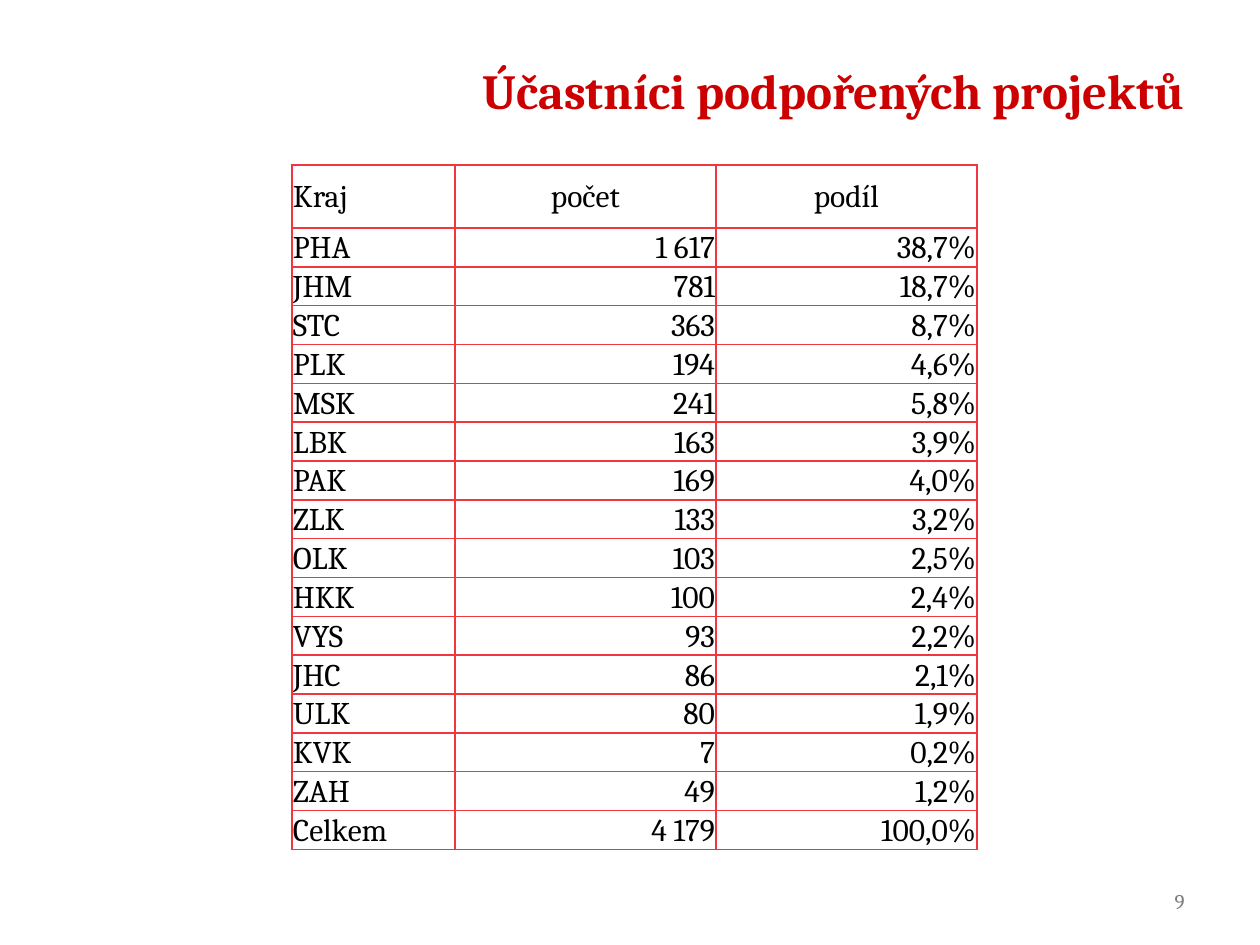
from lxml import etree
from pptx import Presentation
from pptx.dml.color import RGBColor
from pptx.enum.text import MSO_ANCHOR, PP_ALIGN
from pptx.oxml.ns import qn
from pptx.util import Emu, Pt

LEFT, CENTER, RIGHT = PP_ALIGN.LEFT, PP_ALIGN.CENTER, PP_ALIGN.RIGHT
MIDDLE, BOTTOM = MSO_ANCHOR.MIDDLE, MSO_ANCHOR.BOTTOM

TITLE = "Účastníci podpořených projektů"
PAGE_NUMBER = "9"
HEADER = ("Kraj", "počet", "podíl")
REGIONS = [
    ("PHA", "1 617", "38,7%"),
    ("JHM", "781", "18,7%"),
    ("STC", "363", "8,7%"),
    ("PLK", "194", "4,6%"),
    ("MSK", "241", "5,8%"),
    ("LBK", "163", "3,9%"),
    ("PAK", "169", "4,0%"),
    ("ZLK", "133", "3,2%"),
    ("OLK", "103", "2,5%"),
    ("HKK", "100", "2,4%"),
    ("VYS", "93", "2,2%"),
    ("JHC", "86", "2,1%"),
    ("ULK", "80", "1,9%"),
    ("KVK", "7", "0,2%"),
    ("ZAH", "49", "1,2%"),
    ("Celkem", "4 179", "100,0%"),
]

FONT = "Cambria"
COLORS = {"title": "CC0000", "number": "7F7F7F", "text": "000000", "border": "F03741"}

PX = 914400 // 126
TABLE_LEFT, TABLE_TOP = 292, 165
COLUMN_WIDTHS = (163, 261, 261)
HEADER_HEIGHT, BODY_HEIGHT = 63, 603


def px(length):
    return Emu(round(length * PX))


def write(frame, text, size, color, align, bold=False):
    paragraph = frame.paragraphs[0]
    paragraph.text = text
    paragraph.alignment = align
    font = paragraph.runs[0].font
    font.name, font.size, font.bold = FONT, Pt(size), bold
    font.color.rgb = RGBColor.from_string(COLORS[color])


def add_label(slide, box, text, size, color, bold=False):
    frame = slide.shapes.add_textbox(*map(px, box)).text_frame
    frame.word_wrap = True
    frame.vertical_anchor = MIDDLE
    write(frame, text, size, color, RIGHT, bold)


def add_borders(cell):
    properties = cell._tc.get_or_add_tcPr()
    for position, side in enumerate(("a:lnL", "a:lnR", "a:lnT", "a:lnB")):
        line = etree.Element(qn(side), w=str(Pt(1)))
        fill = etree.SubElement(line, qn("a:solidFill"))
        etree.SubElement(fill, qn("a:srgbClr"), val=COLORS["border"])
        properties.insert(position, line)


def fill_cell(cell, text, align, anchor):
    cell.margin_left = cell.margin_right = cell.margin_top = px(1)
    cell.margin_bottom = 0
    cell.vertical_anchor = anchor
    cell.fill.background()
    write(cell.text_frame, text, 18, "text", align)
    add_borders(cell)


def add_region_table(slide):
    rows = [HEADER, *REGIONS]
    table = slide.shapes.add_table(
        len(rows), len(HEADER), px(TABLE_LEFT), px(TABLE_TOP),
        px(sum(COLUMN_WIDTHS)), px(HEADER_HEIGHT + BODY_HEIGHT),
    ).table
    table.first_row = table.horz_banding = False
    for column, width in zip(table.columns, COLUMN_WIDTHS):
        column.width = px(width)
    for r, values in enumerate(rows):
        is_header = r == 0
        table.rows[r].height = px(HEADER_HEIGHT if is_header else BODY_HEIGHT / len(REGIONS))
        value_align = CENTER if is_header else RIGHT
        for c, value in enumerate(values):
            fill_cell(table.cell(r, c), value, value_align if c else LEFT,
                      MIDDLE if is_header else BOTTOM)


def main():
    presentation = Presentation()
    presentation.slide_width, presentation.slide_height = px(1260), px(945)
    slide = presentation.slides.add_slide(presentation.slide_layouts[6])
    add_label(slide, (184, 45, 1013, 90), TITLE, 28, "title", bold=True)
    add_label(slide, (903, 876, 294, 50), PAGE_NUMBER, 12, "number")
    add_region_table(slide)
    presentation.save("out.pptx")


if __name__ == "__main__":
    main()
